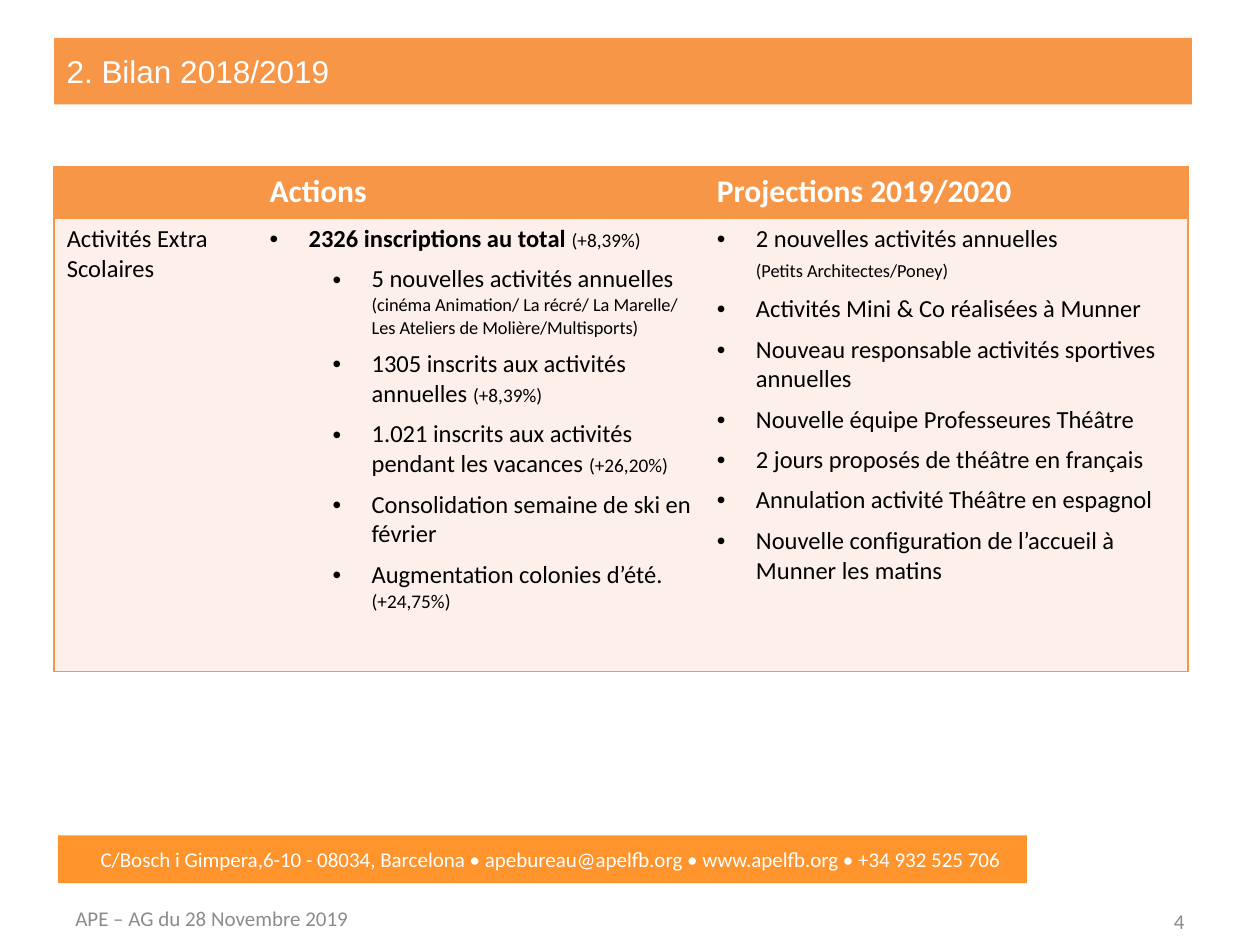
from pptx import Presentation as Deck
from pptx.dml.color import RGBColor as Rgb
from pptx.enum.shapes import MSO_SHAPE as Form
from pptx.enum.text import MSO_ANCHOR as Anchor, PP_ALIGN as Align
from pptx.oxml.ns import qn
from pptx.util import Inches, Pt
from lxml.etree import SubElement as Sub
from dataclasses import dataclass


@dataclass(frozen=True)
class Theme:
    main: str = "F79646"
    bar: str = "FF942C"
    pale: str = "FDEFE9"
    white: str = "FFFFFF"
    black: str = "000000"
    grey: str = "8C8C8C"
    face: str = "Calibri"
    title_face: str = "Arial"
    head: float = 18
    body: float = 14
    foot: float = 12
    note: float = 11
    small: float = 10.5


class Page:
    """Draw styled elements on one slide."""

    def __init__(self, slide, theme):
        self.slide, self.theme = slide, theme

    def run(self, para, text, size, color, bold=False, face=None):
        run = para.add_run()
        run.text = text
        font = run.font
        font.size, font.bold, font.name = Pt(size), bold, face or self.theme.face
        font.color.rgb = Rgb.from_string(color)

    def block(self, box, fill):
        shape = self.slide.shapes.add_shape(Form.RECTANGLE, *map(Inches, box))
        shape.shadow.inherit = False
        shape.fill.solid()
        shape.fill.fore_color.rgb = Rgb.from_string(fill)
        shape.line.fill.background()
        return shape

    def title(self, box, text):
        frame = self.block(box, self.theme.main).text_frame
        frame.word_wrap, frame.vertical_anchor = True, Anchor.MIDDLE
        para = frame.paragraphs[0]
        para.alignment = Align.LEFT
        self.run(para, text, self.theme.head, self.theme.white, face=self.theme.title_face)

    def text(self, box, text, color, align=Align.LEFT, anchor=Anchor.MIDDLE):
        frame = self.slide.shapes.add_textbox(*map(Inches, box)).text_frame
        frame.word_wrap, frame.vertical_anchor = True, anchor
        para = frame.paragraphs[0]
        para.alignment = align
        self.run(para, text, self.theme.foot, color)

    def item(self, para, runs, level, color):
        para.space_after = Pt(6)
        if level is not None:
            para.level = level
            props = para._p.get_or_add_pPr()
            props.set("marL", str(Inches(0.31 + level * 0.5)))
            props.set("indent", str(Inches(-0.31)))
            Sub(props, qn("a:buFont"), typeface="Arial")
            Sub(props, qn("a:buChar"), char="•")
        for text, size, bold in runs:
            if text == "\n":
                Sub(para._p.add_br(), qn("a:rPr"), sz=str(int(size * 100)))
            else:
                self.run(para, text, size, color, bold)

    def edges(self, cell, sides):
        props = cell._tc.get_or_add_tcPr()
        for side in sides:
            line = Sub(props, qn(f"a:ln{side}"), w=str(Pt(1)))
            Sub(Sub(line, qn("a:solidFill")), qn("a:srgbClr"), val=self.theme.main)

    def table(self, box, widths, heights, rows):
        grid = self.slide.shapes.add_table(len(rows), len(widths), *map(Inches, box)).table
        plain = "{2D5ABB26-0587-4C30-8999-92F81FD0307C}"
        grid._tbl.tblPr.find(qn("a:tableStyleId")).text = plain
        for col, width in zip(grid.columns, widths):
            col.width = Inches(width)
        last = len(widths) - 1
        for r, (height, row) in enumerate(zip(heights, rows)):
            grid.rows[r].height = Inches(height)
            fill, ink = (self.theme.pale, self.theme.black) if r else (self.theme.main, self.theme.white)
            for c, items in enumerate(row):
                cell = grid.cell(r, c)
                self.edges(cell, "L" * (c == 0) + "R" * (c == last) + "TB")
                cell.fill.solid()
                cell.fill.fore_color.rgb = Rgb.from_string(fill)
                frame = cell.text_frame
                for i, (level, *runs) in enumerate(items):
                    para = frame.add_paragraph() if i else frame.paragraphs[0]
                    self.item(para, runs, level, ink)


def main():
    look = Theme()
    deck = Deck()
    deck.slide_width, deck.slide_height = Inches(10), Inches(7.5)
    page = Page(deck.slides.add_slide(deck.slide_layouts[6]), look)

    def head(text):
        return [(None, (text, look.head, True))]

    def body(text):
        return text, look.body, False

    def note(text):
        return text, look.note, False

    def small(text):
        return text, look.small, False

    actions = [
        (0, ("2326 inscriptions au total ", look.body, True), note("(+8,39%)")),
        (1, body("5 nouvelles activités annuelles"), body("\n"),
         small("(cinéma Animation/ La récré/ La Marelle/ Les Ateliers de Molière/Multisports)")),
        (1, body("1305 inscrits aux activités annuelles "), note("(+8,39%)")),
        (1, body("1.021 inscrits aux activités pendant les vacances "), note("(+26,20%)")),
        (1, body("Consolidation semaine de ski en février")),
        (1, body("Augmentation colonies d’été. "), note("(+24,75%)")),
    ]
    plans = [
        (0, body("2 nouvelles activités annuelles"), body("\n"),
         small("(Petits Architectes/Poney)"), body(" ")),
    ] + [(0, body(text)) for text in (
        "Activités Mini & Co réalisées à Munner",
        "Nouveau responsable activités sportives annuelles",
        "Nouvelle équipe Professeures Théâtre",
        "2 jours proposés de théâtre en français",
        "Annulation activité Théâtre en espagnol",
        "Nouvelle configuration de l’accueil à Munner les matins",
    )]

    page.block((0.46, 6.63, 7.69, 0.38), look.bar)
    page.text((0.7, 6.67, 7.45, 0.3),
              "C/Bosch i Gimpera,6-10 - 08034, Barcelona • apebureau@apelfb.org • www.apelfb.org • +34 932 525 706",
              look.white, anchor=Anchor.TOP)
    page.title((0.43, 0.3, 9.03, 0.53), "2. Bilan 2018/2019")
    page.table((0.43, 1.32, 9, 4.01), (1.61, 3.55, 3.84), (0.41, 3.6), [
        [[], head("Actions"), head("Projections 2019/2020")],
        [[(None, body("Activités Extra Scolaires"))], actions, plans],
    ])
    page.text((0.5, 7.09, 3.17, 0.4), "APE – AG du 28 Novembre 2019", look.grey)
    page.text((7.17, 7.11, 2.33, 0.4), "4", look.grey, Align.RIGHT)
    deck.save("out.pptx")


if __name__ == "__main__":
    main()
